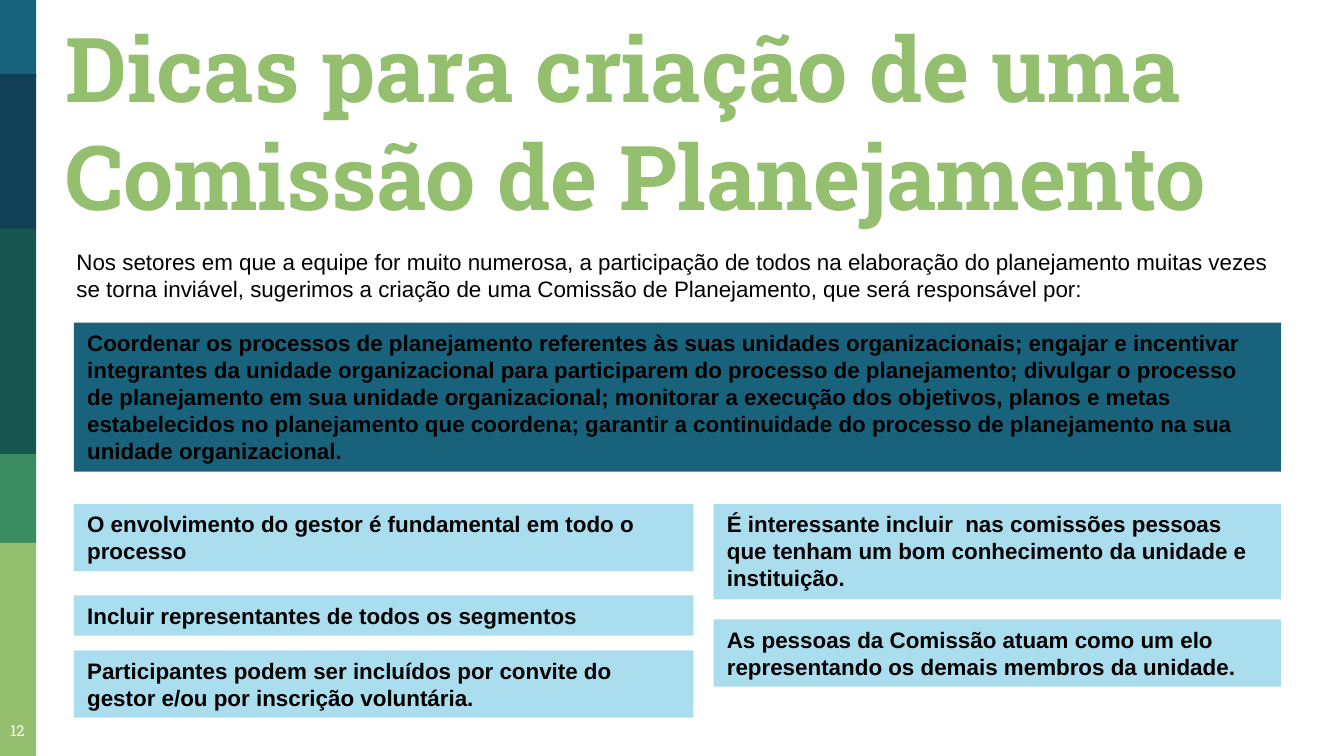
from pptx import Presentation
from pptx.dml.color import RGBColor
from pptx.enum.shapes import MSO_SHAPE
from pptx.enum.text import MSO_ANCHOR, MSO_AUTO_SIZE, PP_ALIGN
from pptx.util import Inches, Pt

TEAL = RGBColor(0x18, 0x63, 0x7B)
NAVY = RGBColor(0x12, 0x40, 0x57)
PINE = RGBColor(0x16, 0x57, 0x51)
GREEN = RGBColor(0x3B, 0x8D, 0x61)
LIME = RGBColor(0x94, 0xBF, 0x6E)
SKY = RGBColor(0xAA, 0xDE, 0xEE)
BLACK = RGBColor(0, 0, 0)
WHITE = RGBColor(0xFF, 0xFF, 0xFF)

# Content
PAGE_WIDTH = 10
PAGE_HEIGHT = PAGE_WIDTH * 9 / 16
TITLE = "Dicas para criação de uma Comissão de Planejamento"
INTRO = (
    "Nos setores em que a equipe for muito numerosa, a participação de todos na "
    "elaboração do planejamento muitas vezes se torna inviável, sugerimos a criação "
    "de uma Comissão de Planejamento, que será responsável por:"
)
DUTIES = [
    "Coordenar os processos de planejamento referentes às suas unidades "
    "organizacionais; engajar e incentivar",
    "integrantes da unidade organizacional para participarem do processo de "
    "planejamento; divulgar o processo de planejamento em sua unidade organizacional; "
    "monitorar a execução dos objetivos, planos e metas estabelecidos no planejamento "
    "que coordena; garantir a continuidade do processo de planejamento na sua unidade "
    "organizacional.",
]
# Each column: left, width, then tips as (top, height, text)
TIP_COLUMNS = [
    (0.55, 4.61, [
        (3.75, 0.5, "O envolvimento do gestor é fundamental em todo o processo"),
        (4.43, 0.3, "Incluir representantes de todos os segmentos"),
        (4.84, 0.5, "Participantes podem ser incluídos por convite do gestor "
                    "e/ou por inscrição voluntária."),
    ]),
    (5.31, 4.22, [
        (3.75, 0.71, "É interessante incluir  nas comissões pessoas que tenham um bom "
                     "conhecimento da unidade e instituição."),
        (4.61, 0.5, "As pessoas da Comissão atuam como um elo representando os demais "
                    "membros da unidade."),
    ]),
]
# Side stripes: top, height, colour
STRIPE_WIDTH = 0.27
STRIPES = [
    (0, 0.58, TEAL),
    (0.55, 1.16, NAVY),
    (1.7, 1.68, PINE),
    (3.38, 0.66, GREEN),
    (4.04, PAGE_HEIGHT - 4.04, LIME),
]


def write(shape, paragraphs, size=12, font="Arial", color=BLACK, bold=False,
          align=PP_ALIGN.LEFT, anchor=MSO_ANCHOR.TOP, inset=None,
          fit=MSO_AUTO_SIZE.SHAPE_TO_FIT_TEXT):
    frame = shape.text_frame
    frame.word_wrap = True
    frame.auto_size = fit
    frame.vertical_anchor = anchor
    if inset is not None:
        frame.margin_left = frame.margin_right = Inches(inset)
        frame.margin_top = frame.margin_bottom = Inches(inset)
    for index, text in enumerate(paragraphs):
        para = frame.paragraphs[0] if index == 0 else frame.add_paragraph()
        para.alignment = align
        span = para.add_run()
        span.text = text
        span.font.size = Pt(size)
        span.font.name = font
        span.font.bold = bold
        span.font.color.rgb = color


def add_panel(page, left, top, width, height, color):
    panel = page.shapes.add_shape(
        MSO_SHAPE.RECTANGLE, Inches(left), Inches(top), Inches(width), Inches(height))
    panel.shadow.inherit = False
    panel.fill.solid()
    panel.fill.fore_color.rgb = color
    panel.line.fill.background()
    return panel


def add_text(page, left, top, width, height, text, **style):
    box = page.shapes.add_textbox(
        Inches(left), Inches(top), Inches(width), Inches(height))
    write(box, [text], **style)


def main():
    deck = Presentation()
    deck.slide_width, deck.slide_height = Inches(PAGE_WIDTH), Inches(PAGE_HEIGHT)
    page = deck.slides.add_slide(deck.slide_layouts[5])

    # Side stripes and page number
    for top, height, color in STRIPES:
        add_panel(page, 0, top, STRIPE_WIDTH, height, color)
    add_text(page, -0.06, 5.27, 0.38, 0.35, "12", size=8, font="Roboto Slab",
             color=WHITE, align=PP_ALIGN.CENTER, inset=0.1, fit=MSO_AUTO_SIZE.NONE)

    # Title and introduction
    title = page.shapes.title
    title.left, title.top = Inches(0.39), Inches(0.53)
    title.width, title.height = Inches(9.38), Inches(1.27)
    write(title, [TITLE], size=48, font="Roboto Slab", color=LIME, bold=True,
          anchor=MSO_ANCHOR.BOTTOM, inset=0.1, fit=MSO_AUTO_SIZE.NONE)
    add_text(page, 0.47, 1.8, 9.11, 0.5, INTRO)

    # Duties and tips
    write(add_panel(page, 0.55, 2.4, 8.98, 1.11, TEAL), DUTIES, bold=True)
    for left, width, tips in TIP_COLUMNS:
        for top, height, text in tips:
            write(add_panel(page, left, top, width, height, SKY), [text], bold=True)

    deck.save("out.pptx")


if __name__ == "__main__":
    main()
